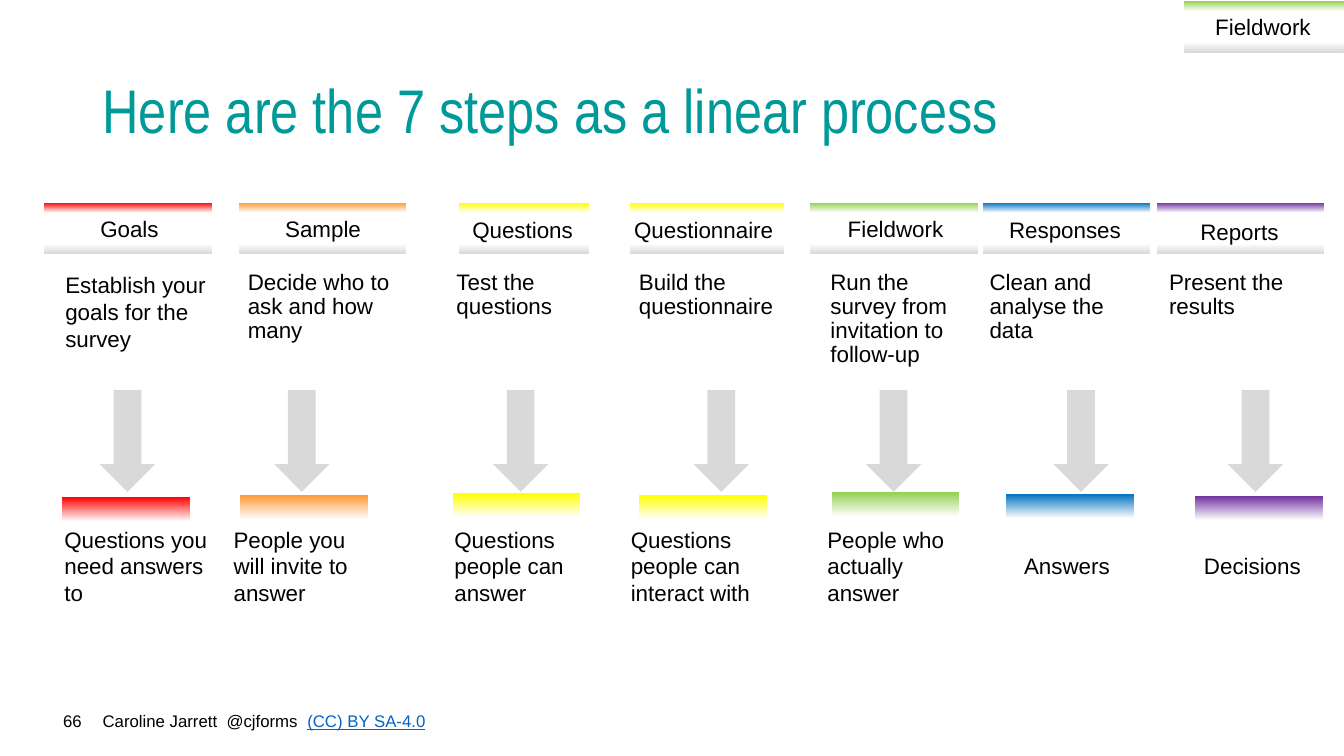
import pptx
import pptx.dml.color
import pptx.enum.shapes
import pptx.enum.text
import pptx.oxml
import pptx.oxml.ns
import pptx.util
from collections import namedtuple

Pt = pptx.util.Pt
ALIGN = pptx.enum.text.PP_ALIGN
ANCHOR = pptx.enum.text.MSO_ANCHOR
SHAPE = pptx.enum.shapes.MSO_SHAPE

COLOURS = {
    "text": "000000", "title": "009999", "link": "0563C1",
    "white": "FFFFFF", "grey": "D9D9D9",
    "red": "FF0000", "orange": "FF9933", "yellow": "FFFF00",
    "green": "92D050", "blue": "0070C0", "purple": "7030A0",
}

TITLE = "Here are the 7 steps as a linear process"
CURRENT_STEP = ("Fieldwork", "green")
PAGE_NUMBER = "66"
CREDIT = "Caroline Jarrett  @cjforms  "
LICENCE = "(CC) BY SA-4.0"

# Names, wording and colour of each step
STEPS = [
    ("Goals", "red", "Establish your goals for the survey",
     "Questions you need answers to"),
    ("Sample", "orange", "Decide who to ask and how many",
     "People you will invite to answer"),
    ("Questions", "yellow", "Test the questions",
     "Questions people can answer"),
    ("Questionnaire", "yellow", "Build the questionnaire",
     "Questions people can interact with"),
    ("Fieldwork", "green", "Run the survey from invitation to follow-up",
     "People who actually answer"),
    ("Responses", "blue", "Clean and analyse the data", "Answers"),
    ("Reports", "purple", "Present the results", "Decisions"),
]

# Left edges and uneven sizes, one row per step
Column = namedtuple("Column", "tab tab_width label label_top text_width "
                              "task arrow bar bar_top outcome")
COLUMNS = [
    Column(31.7, 119.5, 33.8, 150.5, 117.4, 39.6, 71.3, 44.6, 355, 38.9),
    Column(170.6, 119.5, 172.1, 150.5, 117.4, 169.9, 195.8, 171.4, 353.5, 159.8),
    Column(327.6, 92.9, 314.6, 151.2, 117.4, 319, 352.1, 323.3, 352.1, 317.5),
    Column(450, 110.2, 434.9, 151.2, 135.4, 449.3, 495.4, 456.5, 353.5, 443.5),
    Column(578.9, 119.5, 581, 150.5, 117.4, 586.1, 618.5, 594, 351.4, 583.9),
    Column(702, 119.5, 702, 151.2, 117.4, 699.8, 752.4, 718.6, 352.8, 703.4),
    Column(826.6, 119.5, 826.6, 152.6, 117.4, 828, 877, 853.9, 354.2, 835.9),
]
TAB_TOP, TAB_HEIGHT = 144.7, 36.7
LABEL_HEIGHT = 26.6
TASK_TOP, TASK_HEIGHT = 190.1, 65.5
ARROW_TOP, ARROW_WIDTH, ARROW_HEIGHT = 278.6, 39.6, 72.7
BAR_WIDTH, BAR_HEIGHT = 91.4, 87
OUTCOME_TOP, OUTCOME_WIDTH, OUTCOME_HEIGHT = 371.5, 117.4, 65.5


def rgb(name):
    return pptx.dml.color.RGBColor.from_string(COLOURS[name])


def add_run(para, text, size, colour, font):
    run = para.add_run()
    run.text = text
    run.font.size = Pt(size)
    run.font.name = font
    run.font.color.rgb = rgb(colour)
    return run


def add_text(page, text, left, top, width, height, size=16, colour="text",
             font="Arial", align=ALIGN.LEFT, anchor=ANCHOR.TOP, spacing=1.0):
    box = page.shapes.add_textbox(Pt(left), Pt(top), Pt(width), Pt(height))
    frame = box.text_frame
    frame.word_wrap = True
    frame.vertical_anchor = anchor
    para = frame.paragraphs[0]
    para.alignment = align
    para.line_spacing = spacing
    add_run(para, text, size, colour, font)
    return para


def add_plain_shape(page, kind, left, top, width, height):
    shape = page.shapes.add_shape(kind, Pt(left), Pt(top), Pt(width), Pt(height))
    shape.shadow.inherit = False
    shape.line.fill.background()
    return shape


def add_faded_box(page, left, top, width, height, stops):
    """Draw a rectangle with a downward gradient of (percent, colour) stops."""
    box = add_plain_shape(page, SHAPE.RECTANGLE, left, top, width, height)
    box.fill.gradient()
    box.fill.gradient_angle = 270
    stop_list = box.fill._fill._gradFill.find(pptx.oxml.ns.qn("a:gsLst"))
    for old_stop in list(stop_list):
        stop_list.remove(old_stop)
    for percent, colour in stops:
        stop_list.append(pptx.oxml.parse_xml(
            f'<a:gs {pptx.oxml.ns.nsdecls("a")} pos="{percent * 1000}">'
            f'<a:srgbClr val="{COLOURS[colour]}"/></a:gs>'))


def add_tab(page, left, top, width, colour):
    add_faded_box(page, left, top, width, TAB_HEIGHT,
                  [(0, colour), (20, "white"), (80, "white"), (100, "grey")])


def add_step(page, step, column):
    name, colour, task, outcome = step
    add_faded_box(page, column.bar, column.bar_top, BAR_WIDTH, BAR_HEIGHT,
                  [(0, colour), (20, "white"), (100, "white")])
    arrow = add_plain_shape(page, SHAPE.DOWN_ARROW, column.arrow, ARROW_TOP,
                            ARROW_WIDTH, ARROW_HEIGHT)
    arrow.fill.solid()
    arrow.fill.fore_color.rgb = rgb("grey")
    add_tab(page, column.tab, TAB_TOP, column.tab_width, colour)
    add_text(page, name, column.label, column.label_top, column.text_width,
             LABEL_HEIGHT, align=ALIGN.CENTER)
    add_text(page, task, column.task, TASK_TOP, column.text_width, TASK_HEIGHT,
             spacing=1.0 if name == "Goals" else 0.9)
    one_word = " " not in outcome
    add_text(page, outcome, column.outcome, OUTCOME_TOP, OUTCOME_WIDTH,
             OUTCOME_HEIGHT, anchor=ANCHOR.MIDDLE,
             align=ALIGN.CENTER if one_word else ALIGN.LEFT)


def main():
    deck = pptx.Presentation()
    deck.slide_width, deck.slide_height = Pt(960), Pt(540)
    page = deck.slides.add_slide(deck.slide_layouts[6])

    credit = add_text(page, CREDIT, 66.2, 504, 411, 21.6, size=12)
    add_run(credit, LICENCE, 12, "link", "Arial").font.underline = True
    add_text(page, PAGE_NUMBER, 0, 504, 65.5, 21.6, size=12, align=ALIGN.RIGHT)
    add_text(page, TITLE, 66.2, 28.8, 828, 104.4, size=44, colour="title",
             font="Arial Narrow", anchor=ANCHOR.MIDDLE, spacing=0.9)

    for step, column in zip(STEPS, COLUMNS):
        add_step(page, step, column)

    current_name, current_colour = CURRENT_STEP
    add_tab(page, 846, 0.7, 113.8, current_colour)
    add_text(page, current_name, 846, 5.8, 112.3, LABEL_HEIGHT,
             align=ALIGN.CENTER)
    deck.save("out.pptx")


if __name__ == "__main__":
    main()
